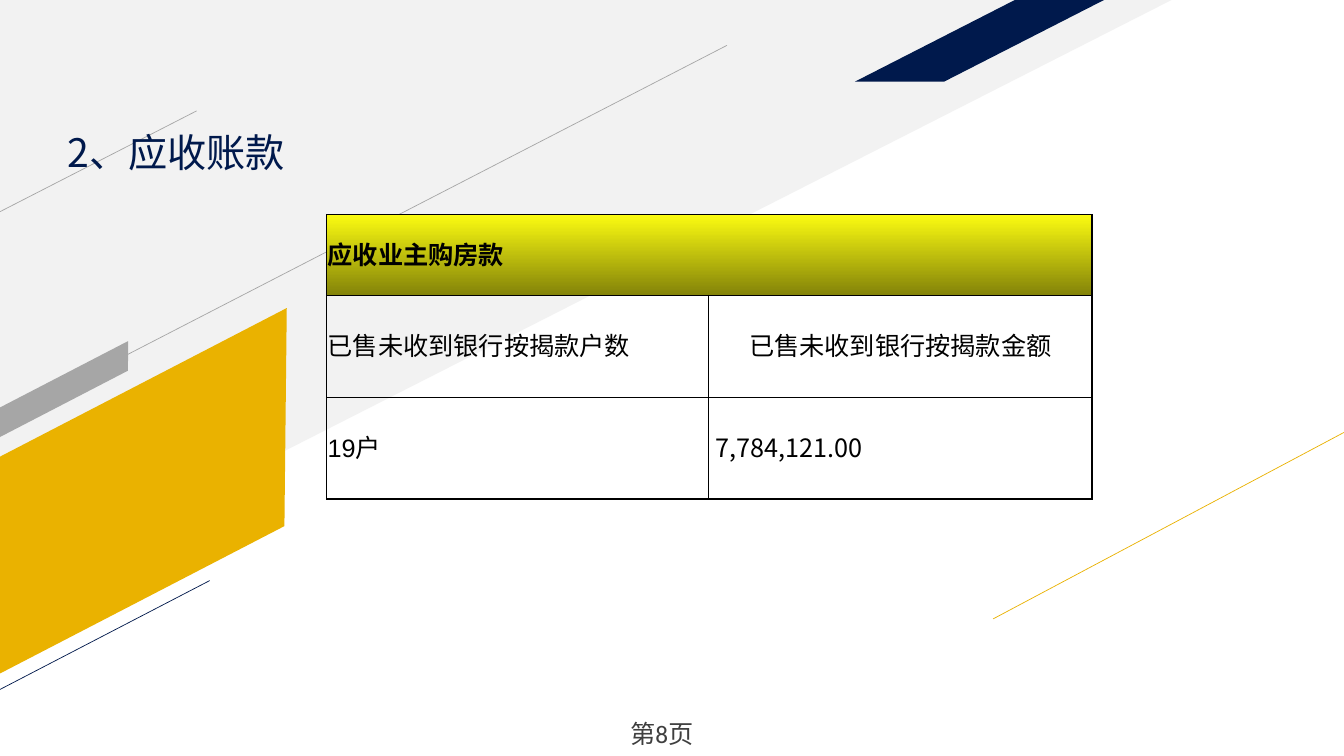
from lxml.etree import SubElement
from pptx import Presentation
from pptx.dml.color import RGBColor
from pptx.enum.shapes import MSO_CONNECTOR as Connector, MSO_SHAPE as Shape
from pptx.enum.text import MSO_ANCHOR as Anchor, PP_ALIGN as Align
from pptx.oxml.ns import qn
from pptx.util import Inches, Pt

THEME = {
    "pale": "F2F2F2", "gold": "EAB200", "navy": "00194C", "gray": "A6A6A6",
    "black": "000000", "footer": "3F3F3F",
    "header_top": "FBFB11", "header_bottom": "838309",
    "title_size": 28, "body_size": 18,
    "cjk": "Noto Sans CJK SC", "table_font": "Arial", "footer_font": "Calibri",
}


def write_text(frame, text, font, color="black", size="body_size", bold=False,
               align=Align.LEFT, spacing=None):
    paragraph = frame.paragraphs[0]
    paragraph.alignment = align
    if spacing:
        paragraph.line_spacing = spacing
    run = paragraph.add_run()
    run.text = text
    run.font.name = THEME[font]
    run.font.size = Pt(THEME[size])
    run.font.bold = bold
    run.font.color.rgb = RGBColor.from_string(THEME[color])
    SubElement(run.font._element, qn("a:ea"), typeface=THEME["cjk"])


def set_border(cell, side, width):
    line = SubElement(cell._tc.get_or_add_tcPr(), qn(f"a:{side}"), w=str(Pt(width)))
    fill = SubElement(line, qn("a:solidFill"))
    SubElement(fill, qn("a:srgbClr"), val=THEME["black"])


presentation = Presentation()
presentation.slide_width = Inches(13.33)
presentation.slide_height = Inches(7.5)
slide = presentation.slides.add_slide(presentation.slide_layouts[6])

decorations = [
    (Shape.RIGHT_TRIANGLE, (0, 0, 11.62, 5.91), 0, None, "pale"),
    (Shape.PARALLELOGRAM, (-0.7, 3.92, 4.22, 1.91), 332.6, 0.532, "gold"),
    ((0, 2.1), (1.95, 1.1), "gray"),
    ((9.85, 6.14), (13.33, 4.29), "gold"),
    (Shape.PARALLELOGRAM, (8.48, 0, 2.47, 0.81), 0, 1.958, "navy"),
    ((0, 4.17), (7.21, 0.45), "gray"),
    ((-0.02, 6.85), (2.08, 5.76), "navy"),
    (Shape.PARALLELOGRAM, (-0.15, 3.73, 1.57, 0.26), 332.6, 0.532, "gray"),
]
for decoration in decorations:
    if len(decoration) == 3:
        start, end, color = decoration
        connector = slide.shapes.add_connector(
            Connector.STRAIGHT, *map(Inches, start + end))
        connector.line.color.rgb = RGBColor.from_string(THEME[color])
        connector.line.width = Pt(0.5)
        SubElement(connector._element.spPr, qn("a:effectLst"))
        continue
    kind, box, rotation, slant, color = decoration
    shape = slide.shapes.add_shape(kind, *map(Inches, box))
    shape.rotation = rotation
    shape.shadow.inherit = False
    shape.fill.solid()
    shape.fill.fore_color.rgb = RGBColor.from_string(THEME[color])
    shape.line.fill.background()
    if slant:
        shape.adjustments[0] = slant
    else:
        shape._element.spPr.xfrm.set("flipV", "1")

title = slide.shapes.add_textbox(
    Inches(0.57), Inches(1.09), Inches(5.23), Inches(0.66)).text_frame
title.word_wrap = True
title.vertical_anchor = Anchor.BOTTOM
title.margin_bottom = 0
write_text(title, "2、应收账款", "cjk", color="navy", size="title_size", spacing=0.9)

rows = [
    ["应收业主购房款", ""],
    ["已售未收到银行按揭款户数", "已售未收到银行按揭款金额"],
    ["19户", " 7,784,121.00"],
]
table = slide.shapes.add_table(
    3, 2, Inches(3.24), Inches(2.13), Inches(7.59), Inches(2.82)).table
table.first_row = False
table.horz_banding = False
for column, width in zip(table.columns, (3.79, 3.8)):
    column.width = Inches(width)
for row, height in zip(table.rows, (0.8, 1.01, 1.01)):
    row.height = Inches(height)
header = table.cell(0, 0)
header.merge(table.cell(0, 1))

for r, texts in enumerate(rows):
    for c, text in enumerate(texts):
        cell = table.cell(r, c)
        cell.vertical_anchor = Anchor.MIDDLE
        cell.margin_left = cell.margin_right = cell.margin_top = Inches(0.01)
        cell.margin_bottom = Inches(0.05)
        set_border(cell, "lnL", 1 if c == 0 else 0.5)
        set_border(cell, "lnR", 1 if c == 1 or r == 0 else 0.5)
        set_border(cell, "lnT", 0.5 if r == 2 else 1)
        set_border(cell, "lnB", 0.5 if r == 1 else 1)
        cell.fill.background()
        if text:
            write_text(cell.text_frame, text,
                       "cjk" if (r, c) == (2, 1) else "table_font",
                       bold=r == 0,
                       align=Align.CENTER if (r, c) == (1, 1) else Align.LEFT)

header.fill.gradient()
header.fill.gradient_angle = 270
for stop, color in zip(header.fill.gradient_stops, ("header_top", "header_bottom")):
    stop.color.rgb = RGBColor.from_string(THEME[color])

footer = slide.shapes.add_textbox(
    Inches(5.15), Inches(7.08), Inches(2.78), Inches(0.4)).text_frame
footer.word_wrap = True
footer.margin_left = Inches(1.1)
write_text(footer, "第8页", "footer_font", color="footer")

presentation.save("out.pptx")
